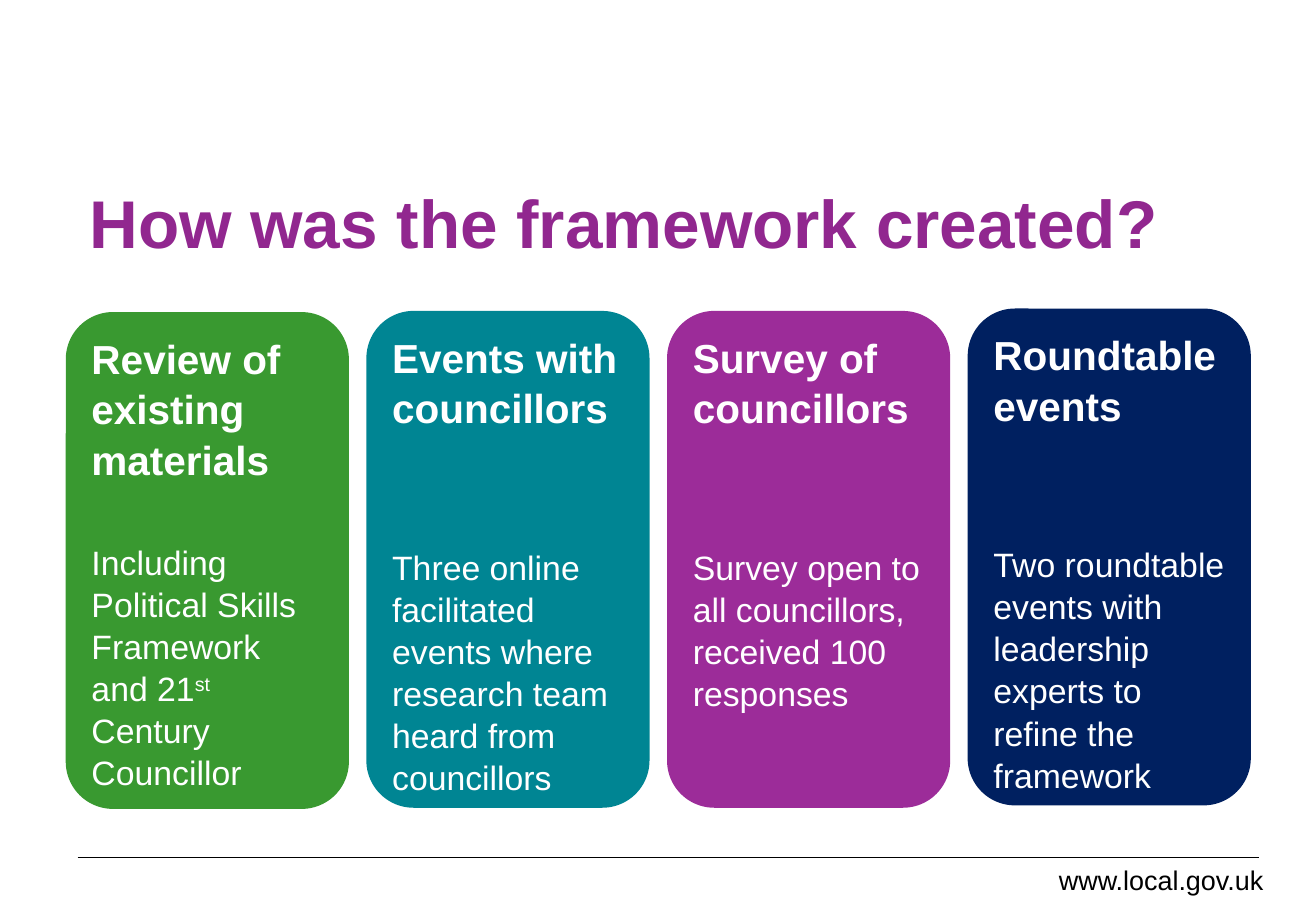
import pptx
import pptx.util
import pptx.dml.color
import pptx.enum.shapes
import pptx.enum.text
import pptx.oxml.ns
import lxml.etree

Pt = pptx.util.Pt
Align = pptx.enum.text.PP_ALIGN
Anchor = pptx.enum.text.MSO_ANCHOR

CARD_LEFT, CARD_STEP, CARD_WIDTH, CARD_HEIGHT = 39, 178.2, 167.8, 294.5
BLANK_LINE = 33.5
CARDS = [
    ("399930", 185, 1, "Review of existing materials",
     ["Including Political Skills Framework and 21", "st", " Century Councillor"]),
    ("008593", 184.3, 2, "Events with councillors",
     ["Three online facilitated events where research team heard from councillors"]),
    ("9C2C99", 184.3, 2, "Survey of councillors",
     ["Survey open to all councillors, received 100 responses"]),
    ("002060", 182.9, 2, "Roundtable events",
     ["Two roundtable events with leadership experts to refine the framework"]),
]


def color(value):
    return pptx.dml.color.RGBColor.from_string(value)


def write(para, text, size, fill, bold=False, raised=False, font="Arial"):
    span = para.add_run()
    span.text = text
    span.font.name = font
    span.font.size = Pt(size)
    span.font.bold = bold
    span.font.color.rgb = color(fill)
    if raised:
        span.font._element.set("baseline", "30000")


class FrameworkSlide:
    black = "000000"
    white = "FFFFFF"
    purple = "91278F"

    def __init__(self, deck):
        self.page = deck.slides.add_slide(deck.slide_layouts[6])

    def text(self, left, top, width, height, text, align=Align.LEFT, anchor=Anchor.TOP, **style):
        box = self.page.shapes.add_textbox(Pt(left), Pt(top), Pt(width), Pt(height))
        box.text_frame.word_wrap = True
        box.text_frame.vertical_anchor = anchor
        para = box.text_frame.paragraphs[0]
        para.alignment = align
        write(para, text, **style)

    def rule(self, left, right, top):
        line = self.page.shapes.add_connector(
            pptx.enum.shapes.MSO_CONNECTOR.STRAIGHT, Pt(left), Pt(top), Pt(right), Pt(top))
        line.line.color.rgb = color(self.black)
        line.line.width = Pt(0.75)
        lxml.etree.SubElement(line._element.spPr, pptx.oxml.ns.qn("a:effectLst"))

    def card(self, left, top, fill, gap, heading, details):
        box = self.page.shapes.add_shape(
            pptx.enum.shapes.MSO_SHAPE.ROUNDED_RECTANGLE,
            Pt(left), Pt(top), Pt(CARD_WIDTH), Pt(CARD_HEIGHT))
        box.shadow.inherit = False
        box.fill.solid()
        box.fill.fore_color.rgb = color(fill)
        box.line.fill.background()
        frame = box.text_frame
        frame.word_wrap = True
        frame.vertical_anchor = Anchor.TOP
        title, body = frame.paragraphs[0], frame.add_paragraph()
        for para in (title, body):
            para.alignment = Align.LEFT
            para.line_spacing = 1.04
        body.space_before = Pt(gap)
        write(title, heading, size=24, fill=self.white, bold=True)
        for index, detail in enumerate(details):
            write(body, detail, size=20, fill=self.white, raised=index == 1)


def main():
    deck = pptx.Presentation()
    deck.slide_width, deck.slide_height = Pt(780), Pt(540)
    slide = FrameworkSlide(deck)
    slide.rule(46, 746, 508.3)
    slide.text(617, 508.3, 139, 26.6, "www.local.gov.uk", align=Align.RIGHT,
               size=16, fill=slide.black)
    slide.text(46, 108.7, 702, 45.4, "How was the framework created?", anchor=Anchor.MIDDLE,
               size=40, fill=slide.purple, bold=True)
    for index, (fill, top, blanks, heading, details) in enumerate(CARDS):
        slide.card(CARD_LEFT + index * CARD_STEP, top, fill, blanks * BLANK_LINE, heading, details)
    deck.save("out.pptx")


if __name__ == "__main__":
    main()
